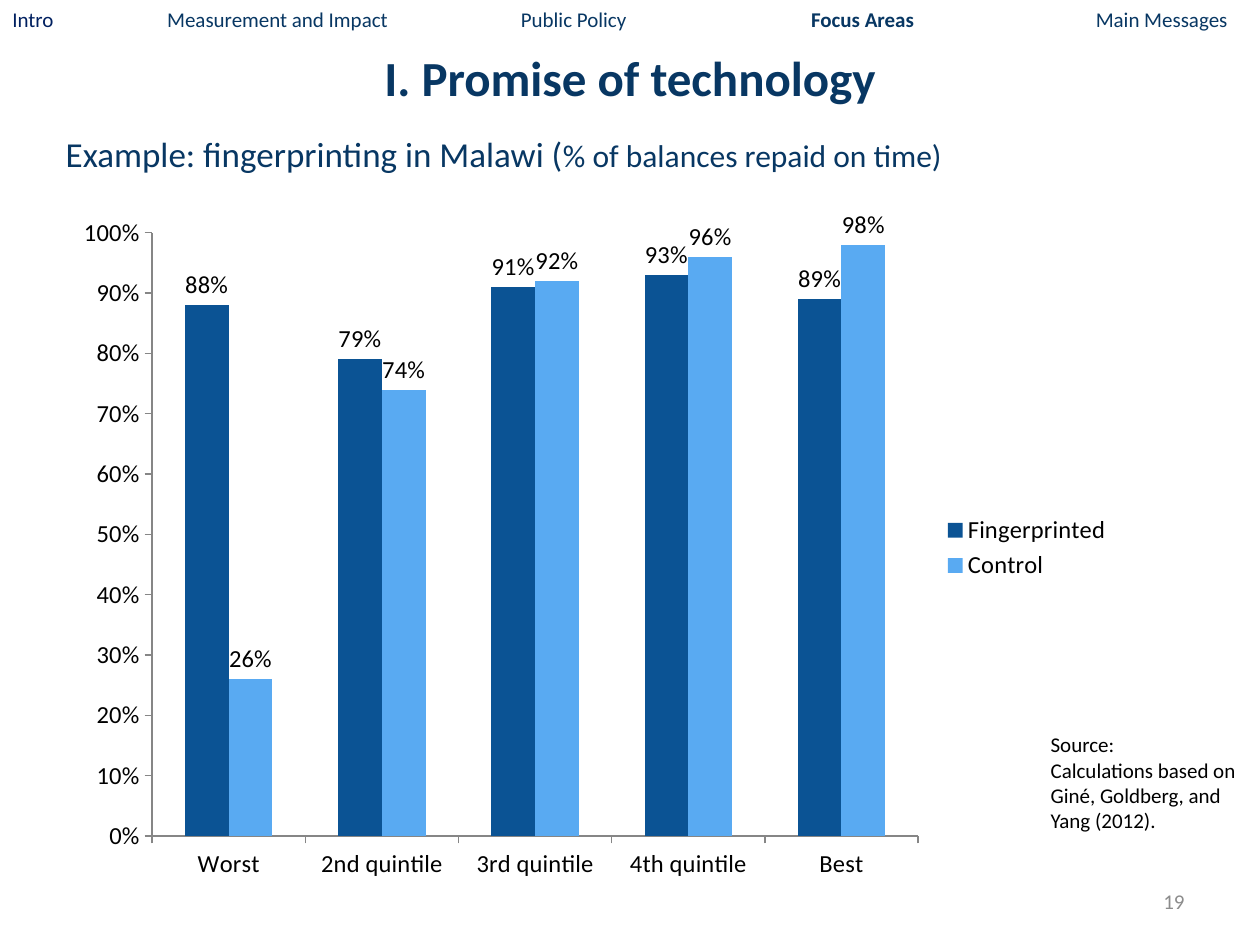
import pptx
import pptx.chart.data
import pptx.dml.color
import pptx.enum.chart
import pptx.enum.text
import pptx.oxml
import pptx.oxml.ns
import pptx.util
from pptx.util import Cm, Pt

RGB = pptx.dml.color.RGBColor
NAVY = RGB(0x08, 0x37, 0x63)
INK = RGB(0x00, 0x20, 0x60)
BLACK = RGB(0, 0, 0)
GRAY = RGB(0x8C, 0x8C, 0x8C)
AXIS = RGB(0x86, 0x86, 0x86)
DARK = RGB(0x0B, 0x53, 0x94)
LIGHT = RGB(0x59, 0xAA, 0xF2)
FACE = "Calibri"
ALIGN = pptx.enum.text.PP_ALIGN
MID = pptx.enum.text.MSO_ANCHOR.MIDDLE
ENUM = pptx.enum.chart


def style(font, size, color, bold=False):
    font.name, font.size, font.bold = FACE, Pt(size), bold
    font.color.rgb = color


def place(shape, box):
    shape.left, shape.top, shape.width, shape.height = map(Cm, box)
    frame = shape.text_frame
    frame.word_wrap = True
    frame.auto_size = pptx.enum.text.MSO_AUTO_SIZE.NONE
    return frame


def add_runs(para, parts):
    for text, size, color, bold in parts:
        run = para.add_run()
        run.text = text
        style(run.font, size, color, bold)


def add_nav(slide, box):
    """Section names on one line, set apart by tab stops."""
    frame = place(slide.shapes.add_textbox(0, 0, 0, 0), box)
    para = frame.paragraphs[0]
    add_runs(para, [
        ("Intro", 12, INK, False),
        ("\tMeasurement and Impact\tPublic Policy", 12, NAVY, False),
        ("\tFocus Areas", 12, NAVY, True),
        ("\tMain Messages", 12, NAVY, False)])
    stops = pptx.oxml.parse_xml(
        "<a:tabLst %s/>" % pptx.oxml.ns.nsdecls("a"))
    for pos in (3.12, 10.25, 16.1, 21.84):
        stop = stops.makeelement(pptx.oxml.ns.qn("a:tab"),
                                 {"pos": str(Cm(pos)), "algn": "l"})
        stops.append(stop)
    para._p.get_or_add_pPr().append(stops)


def add_head(slide, box):
    """Title, with the example line below it."""
    left, top, width, height = box
    frame = place(slide.shapes.title, (left, top, width, 1.57))
    frame.vertical_anchor = MID
    para = frame.paragraphs[0]
    para.text = "I. Promise of technology"
    para.alignment = ALIGN.CENTER
    style(para.runs[0].font, 28, NAVY, True)

    frame = place(slide.placeholders[1],
                  (left + 1.07, top + 1.78, width - 2.11, height - 1.78))
    para = frame.paragraphs[0]
    add_runs(para, [
        ("Example: fingerprinting in Malawi (", 20, NAVY, False),
        ("% of balances repaid on time)", 18, NAVY, False)])
    props = para._p.get_or_add_pPr()
    props.set("marL", "0")
    props.set("indent", "0")
    props.append(pptx.oxml.parse_xml(
        "<a:buNone %s/>" % pptx.oxml.ns.nsdecls("a")))


def add_bars(slide, box):
    """Repayment by quintile, for both groups."""
    data = pptx.chart.data.CategoryChartData(number_format="0%")
    data.categories = ["Worst", "2nd quintile", "3rd quintile",
                       "4th quintile", "Best"]
    data.add_series("Fingerprinted", (0.88, 0.79, 0.91, 0.93, 0.89))
    data.add_series("Control", (0.26, 0.74, 0.92, 0.96, 0.98))
    chart = slide.shapes.add_chart(
        ENUM.XL_CHART_TYPE.COLUMN_CLUSTERED, *map(Cm, box), data).chart
    style(chart.font, 14, BLACK)
    chart.has_title = False
    chart.has_legend = True
    chart.legend.position = ENUM.XL_LEGEND_POSITION.RIGHT
    chart.legend.include_in_layout = False

    # Axes
    for axis in (chart.category_axis, chart.value_axis):
        axis.has_major_gridlines = False
        axis.major_tick_mark = ENUM.XL_TICK_MARK.OUTSIDE
        axis.format.line.color.rgb = AXIS
        axis.format.line.width = Pt(0.75)
    axis = chart.value_axis
    axis.minimum_scale, axis.maximum_scale, axis.major_unit = 0, 1, 0.1
    axis.tick_labels.number_format = "0%"
    axis.tick_labels.number_format_is_linked = False

    # Columns and their labels
    plot = chart.plots[0]
    plot.gap_width, plot.overlap = 150, 0
    plot.vary_by_categories = False
    for series, color in zip(plot.series, (DARK, LIGHT)):
        series.format.fill.solid()
        series.format.fill.fore_color.rgb = color
        labels = series.data_labels
        labels.show_value = True
        labels.number_format = "0%"
        labels.number_format_is_linked = False
        labels.position = ENUM.XL_LABEL_POSITION.OUTSIDE_END

    # Plot area, as shares of the chart
    area = chart._chartSpace.chart.plotArea
    for old in area.findall(pptx.oxml.ns.qn("c:layout")):
        area.remove(old)
    sizes = "".join('<c:%s val="%s"/>' % pair for pair in (
        ("x", 0.084), ("y", 0.042), ("w", 0.722), ("h", 0.877)))
    area.insert(0, pptx.oxml.parse_xml(
        '<c:layout %s><c:manualLayout><c:layoutTarget val="inner"/>'
        '<c:xMode val="edge"/><c:yMode val="edge"/>%s'
        '</c:manualLayout></c:layout>'
        % (pptx.oxml.ns.nsdecls("c"), sizes)))


def add_note(slide, box, text, color, align=ALIGN.LEFT, anchor=None):
    """Small print: the source and the page number."""
    frame = place(slide.shapes.add_textbox(0, 0, 0, 0), box)
    frame.vertical_anchor = anchor
    frame.text = text
    for para in frame.paragraphs:
        para.alignment = align
        style(para.runs[0].font, 12, color)


def main():
    deck = pptx.Presentation()
    deck.slide_width, deck.slide_height = Cm(25.4), Cm(19.05)
    slide = deck.slides.add_slide(deck.slide_layouts[1])
    add_head(slide, (0, 0.76, 25.4, 2.85))
    add_note(slide, (20.93, 14.63, 4.47, 2.31),
             "Source:\nCalculations based on Giné, Goldberg, and Yang (2012).",
             BLACK)
    add_note(slide, (18.21, 17.65, 5.92, 1.02), "19", GRAY, ALIGN.RIGHT, MID)
    add_nav(slide, (0, 0, 25.4, 0.76))
    add_bars(slide, (1.27, 4.11, 21.39, 13.87))
    deck.save("out.pptx")


if __name__ == "__main__":
    main()
